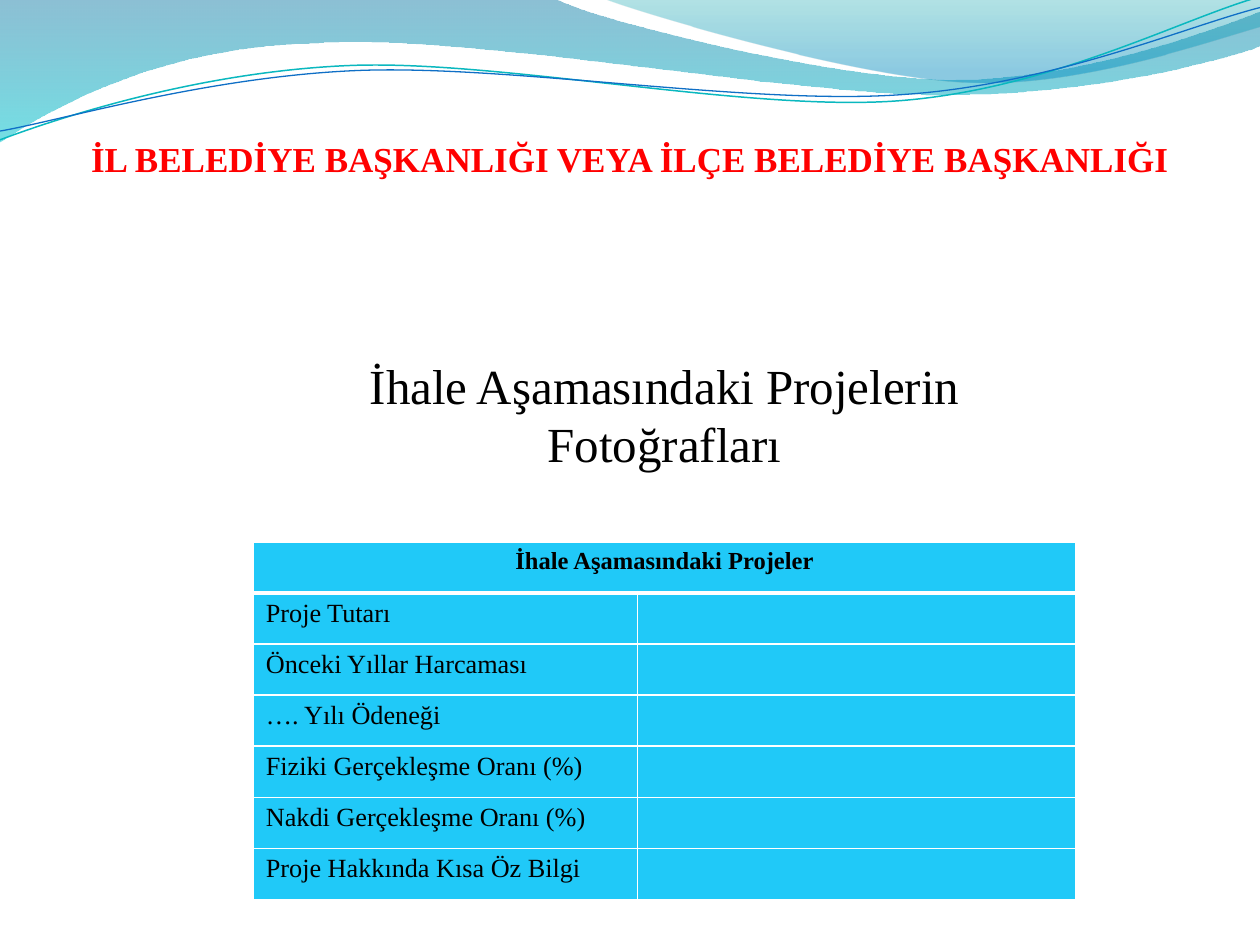
import math
from dataclasses import dataclass

from lxml import etree
from pptx import Presentation, util as u
from pptx.dml.color import RGBColor
from pptx.enum import text
from pptx.oxml import ns


@dataclass(frozen=True)
class Theme:
    font: str = "Times New Roman"
    heading: str = "FF0000"
    ink: str = "000000"
    cell: str = "20C9F8"
    border: str = "FFFFFF"
    # Wave gradients: position, colour, opacity in percent
    deep_wave: tuple = ((0, "0074A1", 45), (1, "00C6CF", 55))
    light_wave: tuple = ((0, "00A1A9", 30), (0.8, "008BBF", 45))
    teal_line: str = "0AB8BF"
    blue_line: str = "0F6FC6"
    title_size: int = 20
    caption_size: int = 28
    header_size: int = 14
    row_size: int = 15


@dataclass(frozen=True)
class Box:
    left: float
    top: float
    width: float
    height: float

    def place(self):
        return [u.Inches(side) for side in (self.left, self.top, self.width, self.height)]


THEME = Theme()
LINE_TILT = 357.3
ROW_LABELS = (
    "Proje Tutarı",
    "Önceki Yıllar Harcaması",
    "…. Yılı Ödeneği",
    "Fiziki Gerçekleşme Oranı (%)",
    "Nakdi Gerçekleşme Oranı (%)",
    "Proje Hakkında Kısa Öz Bilgi",
)

# A two-number step is a straight line, a six-number step a Bézier curve
DEEP_WAVE = (
    (0, 0), (4.4, -0.01), (4.76, 0.17, 6.64, 0.63, 7.58, 0.63),
    (8.53, 0.63, 9.58, 0.26, 10, 0.09), (10.01, 0.36),
    (9.83, 0.44, 8.7, 0.76, 7.46, 0.75), (6.22, 0.75, 3.82, 0.28, 2.57, 0.34),
    (1.29, 0.36, 0.46, 0.83, -0.01, 1.13),
)
LIGHT_WAVE = (
    (4.79, -0.01), (5.09, 0.11, 6.82, 0.62, 7.69, 0.65),
    (8.56, 0.69, 9.61, 0.32, 10, 0.21), (10, 0),
)
TEAL_LINE = (
    (0, 1.11), (0.48, 0.93, 1.58, 0.57, 2.77, 0.52),
    (3.95, 0.47, 5.93, 0.89, 7.13, 0.8), (8.33, 0.71, 9.38, 0.15, 9.98, -0.02),
)
BLUE_LINE = (
    (0, 1.04), (0.47, 0.96, 1.64, 0.61, 2.83, 0.56),
    (4.03, 0.51, 5.97, 0.84, 7.17, 0.75), (8.36, 0.67, 9.41, 0.21, 10, 0.06),
)


def apply_format(target, values):
    for name, value in values.items():
        setattr(target, name, value)


def write(frame, wording, size, color, bold=False, align=text.PP_ALIGN.LEFT):
    para = frame.paragraphs[0]
    para.alignment = align
    span = para.add_run()
    span.text = wording
    apply_format(span.font, {"name": THEME.font, "size": u.Pt(size), "bold": bold})
    span.font.color.rgb = RGBColor.from_string(color)


def turn(point, center, degrees):
    angle = math.radians(degrees)
    x, y = point[0] - center[0], point[1] - center[1]
    return (center[0] + x * math.cos(angle) - y * math.sin(angle),
            center[1] + x * math.sin(angle) + y * math.cos(angle))


def add_outline(page, box, steps, close, rotation=0):
    center = (box.left + box.width / 2, box.top + box.height / 2)
    points = [
        tuple(u.Inches(side) for side in turn(step[i:i + 2], center, -rotation))
        for step in steps for i in range(0, len(step), 2)
    ]
    builder = page.shapes.build_freeform(*points[0])
    builder.add_line_segments(points[1:], close=close)
    shape = builder.convert_to_shape()
    shape.shadow.inherit = False
    shape.rotation = rotation

    # Join each three segments of a curved step into one Bézier curve
    segments = iter(list(shape.element.iter(ns.qn("a:lnTo"))))
    for step in steps[1:]:
        parts = [next(segments) for _ in range(len(step) // 2)]
        if len(parts) == 3:
            curve = etree.Element(ns.qn("a:cubicBezTo"))
            parts[0].addprevious(curve)
            for part in parts:
                curve.append(part[0])
                part.getparent().remove(part)
    return shape


def add_waves(page, deep_box, light_box):
    """Translucent gradient bands."""
    for box, steps, stops in (
        (deep_box, DEEP_WAVE, THEME.deep_wave),
        (light_box, LIGHT_WAVE, THEME.light_wave),
    ):
        wave = add_outline(page, box, steps, close=True)
        wave.line.fill.background()
        wave.fill.gradient()
        wave.fill.gradient_angle = 270
        for stop, (position, color, _) in zip(wave.fill.gradient_stops, stops):
            stop.position = position
            stop.color.rgb = RGBColor.from_string(color)
        colors = wave.element.spPr.iter(ns.qn("a:srgbClr"))
        for node, (_, _, opacity) in zip(list(colors), stops):
            etree.SubElement(node, ns.qn("a:alpha"), val=str(opacity * 1000))


def add_wave_lines(page, teal_box, blue_box):
    """Thin crossing lines."""
    for box, steps, color, width in (
        (teal_box, TEAL_LINE, THEME.teal_line, 0.85),
        (blue_box, BLUE_LINE, THEME.blue_line, 0.75),
    ):
        curve = add_outline(page, box, steps, close=False, rotation=LINE_TILT)
        curve.fill.background()
        curve.line.color.rgb = RGBColor.from_string(color)
        curve.line.width = u.Pt(width)


def add_title(page, box):
    title = page.shapes.title
    apply_format(title, dict(zip(("left", "top", "width", "height"), box.place())))
    apply_format(title.text_frame, {
        "margin_left": 0, "margin_right": 0, "margin_bottom": 0,
        "margin_top": u.Inches(0.05), "word_wrap": True,
        "auto_size": text.MSO_AUTO_SIZE.NONE,
        "vertical_anchor": text.MSO_ANCHOR.MIDDLE,
    })
    write(title.text_frame, "İL BELEDİYE BAŞKANLIĞI VEYA İLÇE BELEDİYE BAŞKANLIĞI",
          THEME.title_size, THEME.heading, True, text.PP_ALIGN.CENTER)


def add_caption(page, box):
    frame = page.shapes.add_textbox(*box.place()).text_frame
    apply_format(frame, {
        "word_wrap": True, "margin_bottom": u.Inches(0.49),
        "vertical_anchor": text.MSO_ANCHOR.MIDDLE,
    })
    write(frame, "İhale Aşamasındaki Projelerin Fotoğrafları",
          THEME.caption_size, THEME.ink, align=text.PP_ALIGN.CENTER)


def add_bottom_border(cell, points):
    border = etree.Element(ns.qn("a:lnB"), w=str(u.Pt(points)))
    fill = etree.SubElement(border, ns.qn("a:solidFill"))
    etree.SubElement(fill, ns.qn("a:srgbClr"), val=THEME.border)
    cell.fill.solid()
    cell.fill.fore_color.rgb = RGBColor.from_string(THEME.cell)
    cell.text_frame.word_wrap = True
    next(cell.text_frame._txBody.getparent().iter(ns.qn("a:tcPr"))).insert(0, border)


def add_project_table(page, box):
    frame = page.shapes.add_table(len(ROW_LABELS) + 1, 2, *box.place())
    table = frame.table
    label_width = 3.05
    for column, width in zip(table.columns, (label_width, box.width - label_width)):
        column.width = u.Inches(width)
    for cell in table.iter_cells():
        cell.fill.solid()
        cell.fill.fore_color.rgb = RGBColor.from_string(THEME.cell)

    # Header across both columns, then one label per row
    header = table.cell(0, 0)
    header.merge(table.cell(0, 1))
    write(header.text_frame, "İhale Aşamasındaki Projeler",
          THEME.header_size, THEME.ink, True, text.PP_ALIGN.CENTER)
    for row, label in enumerate(ROW_LABELS, start=1):
        write(table.cell(row, 0).text_frame, label, THEME.row_size, THEME.ink)

    # Heavy rule under the header
    for properties in list(frame.element.iter(ns.qn("a:tcPr")))[:2]:
        border = etree.Element(ns.qn("a:lnB"), w=str(u.Pt(3)))
        fill = etree.SubElement(border, ns.qn("a:solidFill"))
        etree.SubElement(fill, ns.qn("a:srgbClr"), val=THEME.border)
        properties.insert(0, border)


def main():
    deck = Presentation()
    deck.slide_width, deck.slide_height = u.Inches(10), u.Inches(7.5)
    page = deck.slides.add_slide(deck.slide_layouts[5])
    add_waves(page, Box(-0.01, -0.01, 10.02, 1.14), Box(4.79, -0.01, 5.21, 0.7))
    add_wave_lines(page, Box(-0.02, 0.22, 10.02, 0.71), Box(-0.02, 0.3, 10.03, 0.58))
    add_title(page, Box(0, 0.92, 10, 0.63))
    add_project_table(page, Box(2.01, 4.3, 6.53, 2.84))
    add_caption(page, Box(2.01, 2.18, 6.53, 2.65))
    deck.save("out.pptx")


if __name__ == "__main__":
    main()
